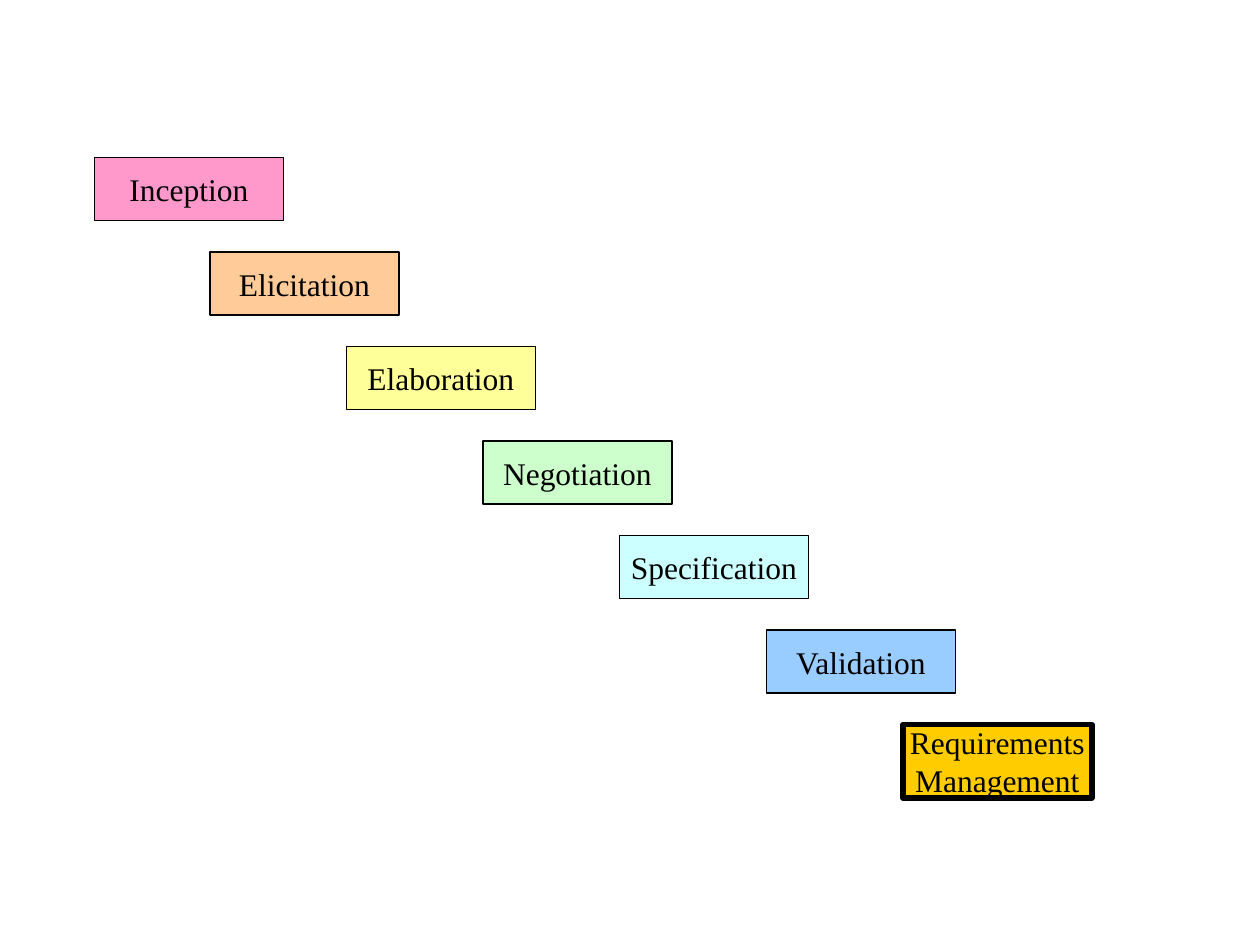
import pptx
import pptx.dml.color
import pptx.enum.shapes
import pptx.enum.text
import pptx.util

PX = 9525  # EMU per px, 96 px to the inch

THEME = {
    "font": {"name": "Times New Roman", "size": pptx.util.Pt(18)},
    "ink": "000000",
    "line": 0.75,
    "heavy_line": 3,
}

# Name, left edge, fill
TASKS = [
    ("Inception", 0, "FF99CC"),
    ("Elicitation", 88, "FFCC99"),
    ("Elaboration", 192, "FFFF99"),
    ("Negotiation", 296, "CCFFCC"),
    ("Specification", 400, "CCFFFF"),
    ("Validation", 512, "99CCFF"),
    ("Requirements\nManagement", 616, "FFCC00"),
]
STEP_DOWN = 72
BOX_W, BOX_H, CURRENT_H = 144, 48, 56


def px(n):
    return pptx.util.Emu(n * PX)


def rgb(value):
    return pptx.dml.color.RGBColor.from_string(value)


def set_all(target, values):
    for name, value in values.items():
        setattr(target, name, value)


def add_task(slide, box, text, fill, line_width):
    """One outlined box with centred text."""
    sp = slide.shapes.add_shape(
        pptx.enum.shapes.MSO_SHAPE.RECTANGLE, *map(px, box))
    sp.shadow.inherit = False
    sp.fill.solid()
    sp.fill.fore_color.rgb = rgb(fill)
    sp.line.color.rgb = rgb(THEME["ink"])
    sp.line.width = pptx.util.Pt(line_width)

    tf = sp.text_frame
    tf.text = text
    set_all(tf, {"word_wrap": False,
                 "vertical_anchor": pptx.enum.text.MSO_ANCHOR.MIDDLE})
    for p in tf.paragraphs:
        p.alignment = pptx.enum.text.PP_ALIGN.CENTER
        for r in p.runs:
            set_all(r.font, THEME["font"])
            r.font.color.rgb = rgb(THEME["ink"])


def add_staircase(slide, left, top):
    """Tasks stepping down to the right; the last one is the current topic."""
    for i, (text, x, fill) in enumerate(TASKS):
        current = i == len(TASKS) - 1
        box = (left + x, top + i * STEP_DOWN,
               BOX_W, CURRENT_H if current else BOX_H)
        add_task(slide, box, text, fill,
                 THEME["heavy_line" if current else "line"])


def main():
    prs = pptx.Presentation()
    set_all(prs, {"slide_width": px(960), "slide_height": px(720)})
    slide = prs.slides.add_slide(prs.slide_layouts[6])
    add_staircase(slide, 72, 120)
    prs.save("out.pptx")


if __name__ == "__main__":
    main()
